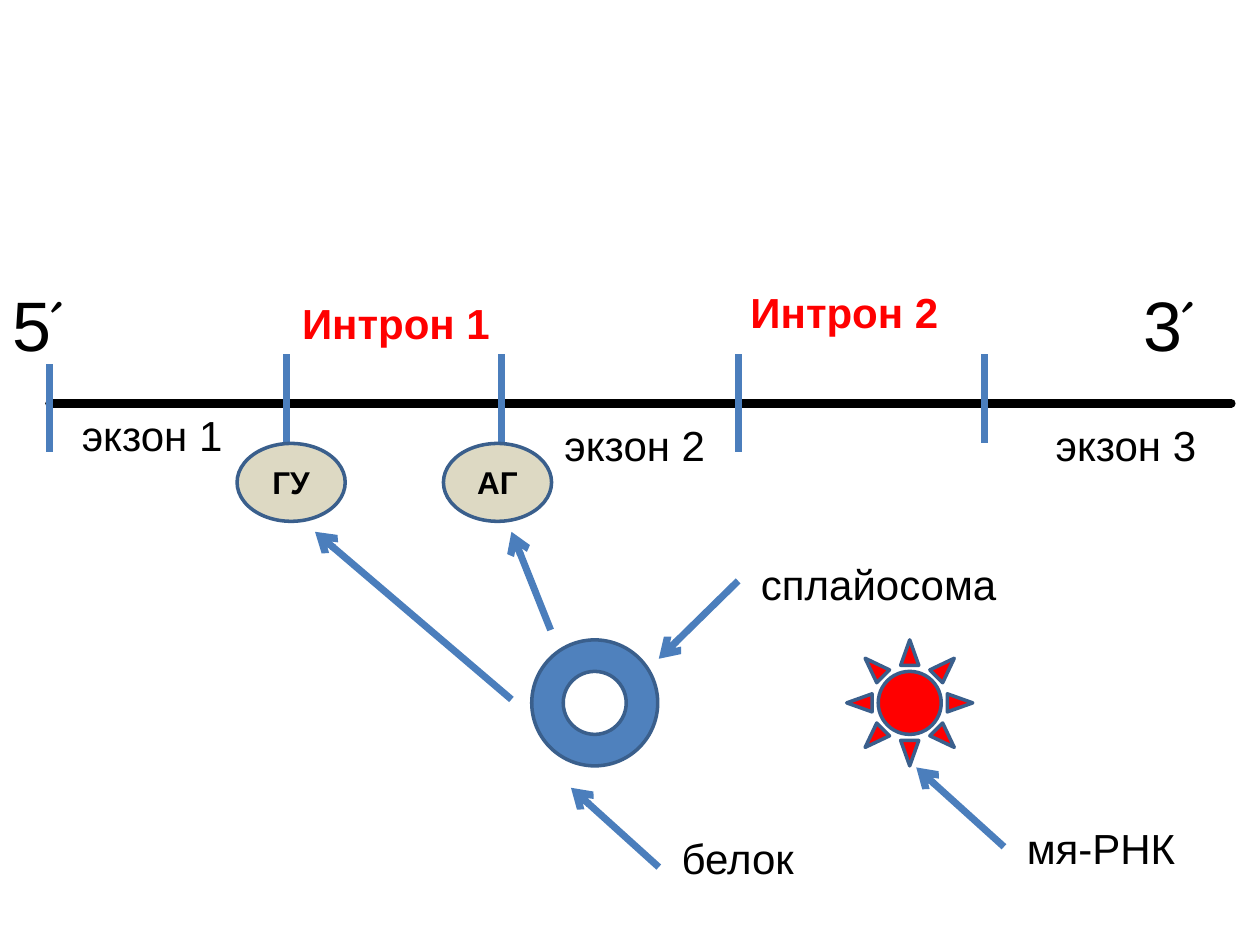
from dataclasses import dataclass

from lxml import etree
from pptx import Presentation
from pptx.dml.color import RGBColor
from pptx.enum.shapes import MSO_CONNECTOR, MSO_SHAPE
from pptx.enum.text import MSO_ANCHOR, MSO_AUTO_SIZE, PP_ALIGN
from pptx.oxml.ns import qn
from pptx.util import Cm, Pt

STRAIGHT = MSO_CONNECTOR.STRAIGHT
OVAL, DONUT, SUN = MSO_SHAPE.OVAL, MSO_SHAPE.DONUT, MSO_SHAPE.SUN
MIDDLE, CENTER = MSO_ANCHOR.MIDDLE, PP_ALIGN.CENTER
GROW = MSO_AUTO_SIZE.SHAPE_TO_FIT_TEXT


@dataclass(frozen=True)
class Theme:
    black: str = "000000"
    red: str = "FF0000"
    blue: str = "4F81BD"
    line_blue: str = "4B7EBC"
    outline: str = "3A5F8C"
    beige: str = "DDD9C3"
    font: str = "Arial"
    prime_font: str = "Cambria"
    end_size: int = 40
    label_size: int = 24
    site_size: int = 18
    strand_width: int = 5
    line_width: int = 4
    outline_width: int = 2


class Diagram:
    def __init__(self, slide, theme):
        self.slide = slide
        self.theme = theme

    def add_text(self, paragraph, text, size, color, bold=False, name=None):
        run = paragraph.add_run()
        run.text = text
        formats = {"name": name or self.theme.font, "size": Pt(size), "bold": bold}
        for attribute, value in formats.items():
            setattr(run.font, attribute, value)
        run.font.color.rgb = RGBColor.from_string(color)

    def text_box(self, box, wrap):
        """Add an empty text box and return its first paragraph."""
        frame = self.slide.shapes.add_textbox(*map(Cm, box)).text_frame
        for attribute, value in {"word_wrap": wrap, "auto_size": GROW}.items():
            setattr(frame, attribute, value)
        return frame.paragraphs[0]

    def label(self, text, box, color=None, bold=False, wrap=False):
        self.add_text(self.text_box(box, wrap), text, self.theme.label_size,
                      color or self.theme.black, bold)

    def strand_end(self, digit, left):
        """Label one end of the strand: a digit with a prime sign."""
        theme = self.theme
        paragraph = self.text_box((left, 5.56, 2.03, 1.96), False)
        for text, name in ((digit, theme.font), ("´", theme.prime_font)):
            self.add_text(paragraph, text, theme.end_size, theme.black, name=name)

    def line(self, start, end, color=None, width=None, cap=None, arrow=False):
        connector = self.slide.shapes.add_connector(
            STRAIGHT, *map(Cm, (*start, *end)))
        connector.line.color.rgb = RGBColor.from_string(color or self.theme.line_blue)
        connector.line.width = Pt(width or self.theme.line_width)
        properties = connector._element.spPr
        outline = properties.find(qn("a:ln"))
        if cap:
            outline.set("cap", cap)
        if arrow:
            etree.SubElement(outline, qn("a:tailEnd"), type="arrow")
        etree.SubElement(properties, qn("a:effectLst"))

    def shape(self, kind, box, fill):
        shape = self.slide.shapes.add_shape(kind, *map(Cm, box))
        shape.shadow.inherit = False
        shape.fill.solid()
        shape.fill.fore_color.rgb = RGBColor.from_string(fill)
        shape.line.color.rgb = RGBColor.from_string(self.theme.outline)
        shape.line.width = Pt(self.theme.outline_width)
        return shape

    def splice_site(self, text, left):
        theme = self.theme
        frame = self.shape(OVAL, (left, 8.94, 2.18, 1.57), theme.beige).text_frame
        for attribute, value in {"vertical_anchor": MIDDLE, "word_wrap": True}.items():
            setattr(frame, attribute, value)
        paragraph = frame.paragraphs[0]
        paragraph.alignment = CENTER
        self.add_text(paragraph, text, theme.site_size, theme.black, bold=True)


def main():
    presentation = Presentation()
    presentation.slide_width, presentation.slide_height = Cm(25.4), Cm(19.05)
    theme = Theme()
    diagram = Diagram(presentation.slides.add_slide(presentation.slide_layouts[6]), theme)

    diagram.line((1, 8.13), (24.82, 8.13), theme.black, theme.strand_width, cap="rnd")
    for digit, left in (("5", 0), ("3", 22.81)):
        diagram.strand_end(digit, left)

    boundaries = ((1, 7.34, 9.12), (5.77, 7.14, 8.92), (10.12, 7.14, 8.94),
                  (14.88, 7.14, 9.12), (19.84, 7.14, 8.94))
    for x, top, bottom in boundaries:
        diagram.line((x, top), (x, bottom))

    introns = (("Интрон 1", (5.84, 5.87, 4.37, 1.27)),
               ("Интрон 2", (14.88, 5.66, 4.55, 1.27)))
    for name, box in introns:
        diagram.label(name, box, theme.red, bold=True, wrap=True)

    captions = (("экзон 1", 1.4, 8.13, 3.58), ("экзон 2", 11.13, 8.33, 3.38),
                ("экзон 3", 21.03, 8.33, 3.38), ("сплайосома", 15.09, 11.13, 5.31),
                ("белок", 13.49, 16.66, 2.79), ("мя-РНК", 20.45, 16.46, 3.53))
    for name, left, top, width in captions:
        diagram.label(name, (left, top, width, 1.3))

    for bases, left in (("ГУ", 4.78), ("АГ", 8.94)):
        diagram.splice_site(bases, left)

    for kind, left, fill in ((DONUT, 10.72, theme.blue), (SUN, 17.07, theme.red)):
        diagram.shape(kind, (left, 12.9, 2.54, 2.54), fill)

    pointers = (((13.28, 17.48), (11.51, 15.88)),  # protein
                ((20.24, 17.07), (18.47, 15.47)),  # small nuclear RNA
                ((14.88, 11.71), (13.28, 13.28)),  # spliceosome
                ((11.1, 12.7), (10.31, 10.72)),    # to the АГ site
                ((10.31, 14.1), (6.35, 10.72)))    # to the ГУ site
    for start, end in pointers:
        diagram.line(start, end, arrow=True)

    presentation.save("out.pptx")


if __name__ == "__main__":
    main()
